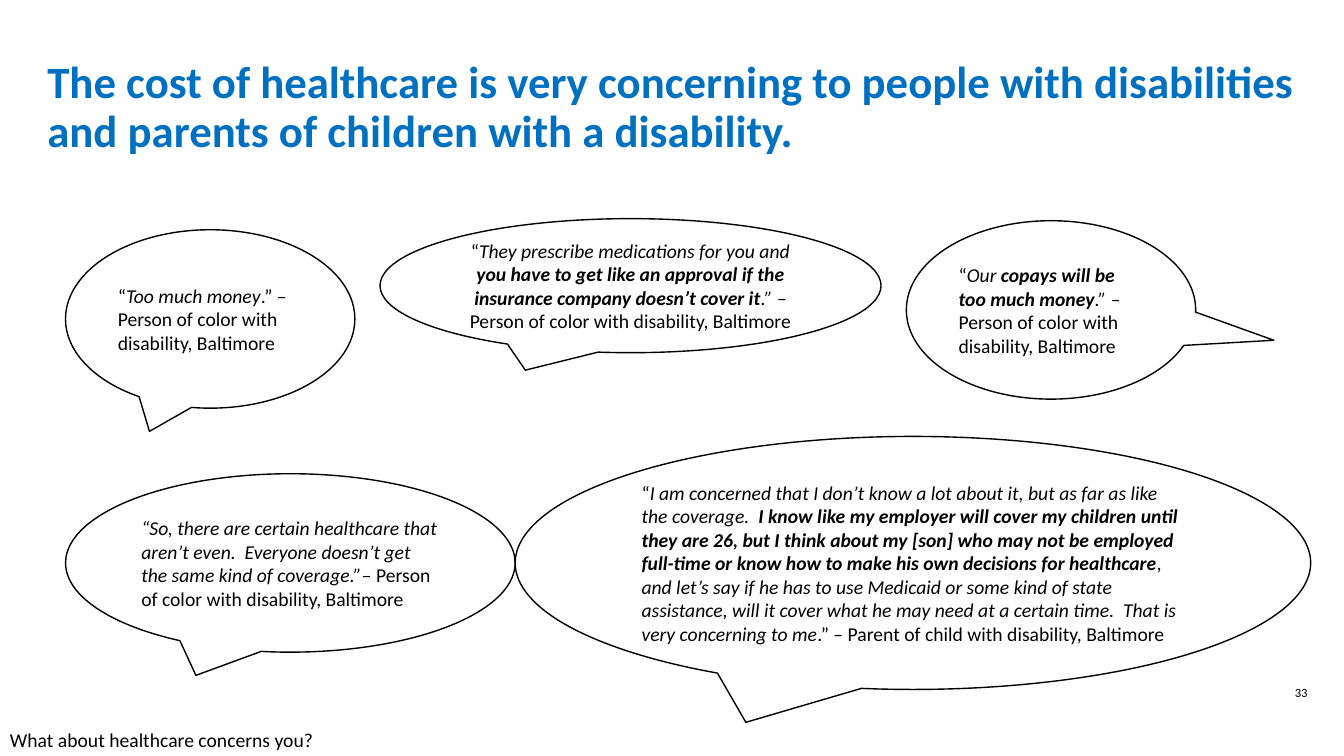
from pptx import Presentation
from pptx.dml.color import RGBColor
from pptx.enum.shapes import MSO_SHAPE
from pptx.enum.text import MSO_ANCHOR, PP_ALIGN
from pptx.util import Inches, Pt

CALLOUT = MSO_SHAPE.OVAL_CALLOUT
TOP, MIDDLE, BOTTOM = MSO_ANCHOR.TOP, MSO_ANCHOR.MIDDLE, MSO_ANCHOR.BOTTOM
LEFT, CENTER = PP_ALIGN.LEFT, PP_ALIGN.CENTER
PLAIN, ITALIC, BOLD, BOLD_ITALIC = "", "i", "b", "bi"

THEME = {
    "font": "Calibri",
    "ink": RGBColor(0, 0, 0),
    "title_color": RGBColor(0x00, 0x70, 0xC0),
    "title_size": Pt(32),
    "body_size": Pt(14),
    "number_size": Pt(9),
    "outline": Pt(1),
}

presentation = Presentation()
presentation.slide_width = Inches(13.33)
presentation.slide_height = Inches(7.5)
slide = presentation.slides.add_slide(presentation.slide_layouts[6])


def place(left, top, width, height):
    column = presentation.slide_width / 100
    row = presentation.slide_height / 100
    return [round(length) for length in (left * column, top * row, width * column, height * row)]


def write(shape, runs, size, color, alignment, anchor):
    frame = shape.text_frame
    frame.word_wrap = True
    frame.vertical_anchor = anchor
    paragraph = frame.paragraphs[0]
    paragraph.alignment = alignment
    for text, style in runs:
        run = paragraph.add_run()
        run.text = text
        run.font.name = THEME["font"]
        run.font.size = size
        run.font.color.rgb = color
        run.font.bold = "b" in style
        run.font.italic = "i" in style
    return paragraph


number_box = slide.shapes.add_textbox(*place(94, 90, 5.63, 4.4))
write(number_box, [("33", PLAIN)], THEME["number_size"], THEME["ink"], CENTER, TOP)

question_box = slide.shapes.add_textbox(*place(0, 92.4, 27.4, 7.6))
write(question_box, [("What about healthcare concerns you?", PLAIN)],
      THEME["body_size"], THEME["ink"], LEFT, BOTTOM)

MARGIN_LEFT = 4.88
SMALL_WIDTH, USUAL_HEIGHT = 21.53, 23.6
COVERAGE_WIDTH = 33.45
DOWN_LEFT, RIGHT = (-0.21, 0.63), (0.77, 0.17)

quotes = [
    ((MARGIN_LEFT + COVERAGE_WIDTH, 57.73, 59.19, 33.47), DOWN_LEFT, LEFT, [
        ("“", PLAIN),
        ("I am concerned that I don’t know a lot about it, but as far as like the coverage.  ", ITALIC),
        ("I know like my employer will cover my children until they are 26, but I think about "
         "my [son] who may not be employed full-time or know how to make his own decisions "
         "for healthcare", BOLD_ITALIC),
        (", and let’s say if he has to use Medicaid or some kind of state assistance, will it "
         "cover what he may need at a certain time.  That is very concerning to me", ITALIC),
        (".” – Parent of child with disability, Baltimore", PLAIN),
    ]),
    ((MARGIN_LEFT, 62.67, COVERAGE_WIDTH, USUAL_HEIGHT), DOWN_LEFT, LEFT, [
        ("“So, there are certain healthcare that aren’t even.  Everyone doesn’t get the same "
         "kind of coverage.”– ", ITALIC),
        ("Person of color with disability, Baltimore", PLAIN),
    ]),
    ((67.44, 29.2, SMALL_WIDTH, USUAL_HEIGHT), RIGHT, LEFT, [
        ("“", PLAIN),
        ("Our ", ITALIC),
        ("copays will be too much money", BOLD_ITALIC),
        (".” ", ITALIC),
        ("– Person of color with disability, Baltimore", PLAIN),
    ]),
    ((28.28, 28.93, 37.28, 17.73), DOWN_LEFT, CENTER, [
        ("“", PLAIN),
        ("They prescribe medications for you and ", ITALIC),
        ("you have to get like an approval if the insurance company doesn’t cover it", BOLD_ITALIC),
        (".” ", ITALIC),
        ("– Person of color with disability, Baltimore", PLAIN),
    ]),
    ((MARGIN_LEFT, 30.4, SMALL_WIDTH, USUAL_HEIGHT), DOWN_LEFT, LEFT, [
        ("“", PLAIN),
        ("Too much money", ITALIC),
        (".” – Person of color with disability, Baltimore", PLAIN),
    ]),
]

for area, tail, alignment, runs in quotes:
    bubble = slide.shapes.add_shape(CALLOUT, *place(*area))
    bubble.shadow.inherit = False
    bubble.fill.background()
    bubble.line.color.rgb = THEME["ink"]
    bubble.line.width = THEME["outline"]
    bubble.adjustments[0], bubble.adjustments[1] = tail
    write(bubble, runs, THEME["body_size"], THEME["ink"], alignment, MIDDLE)

title_box = slide.shapes.add_textbox(*place(2.78, 4.67, 94.52, 19.33))
title = write(title_box, [
    ("The cost of healthcare is very concerning to people with disabilities "
     "and parents of children with a disability.", BOLD),
], THEME["title_size"], THEME["title_color"], LEFT, MIDDLE)
title.line_spacing = 0.9

presentation.save("out.pptx")
